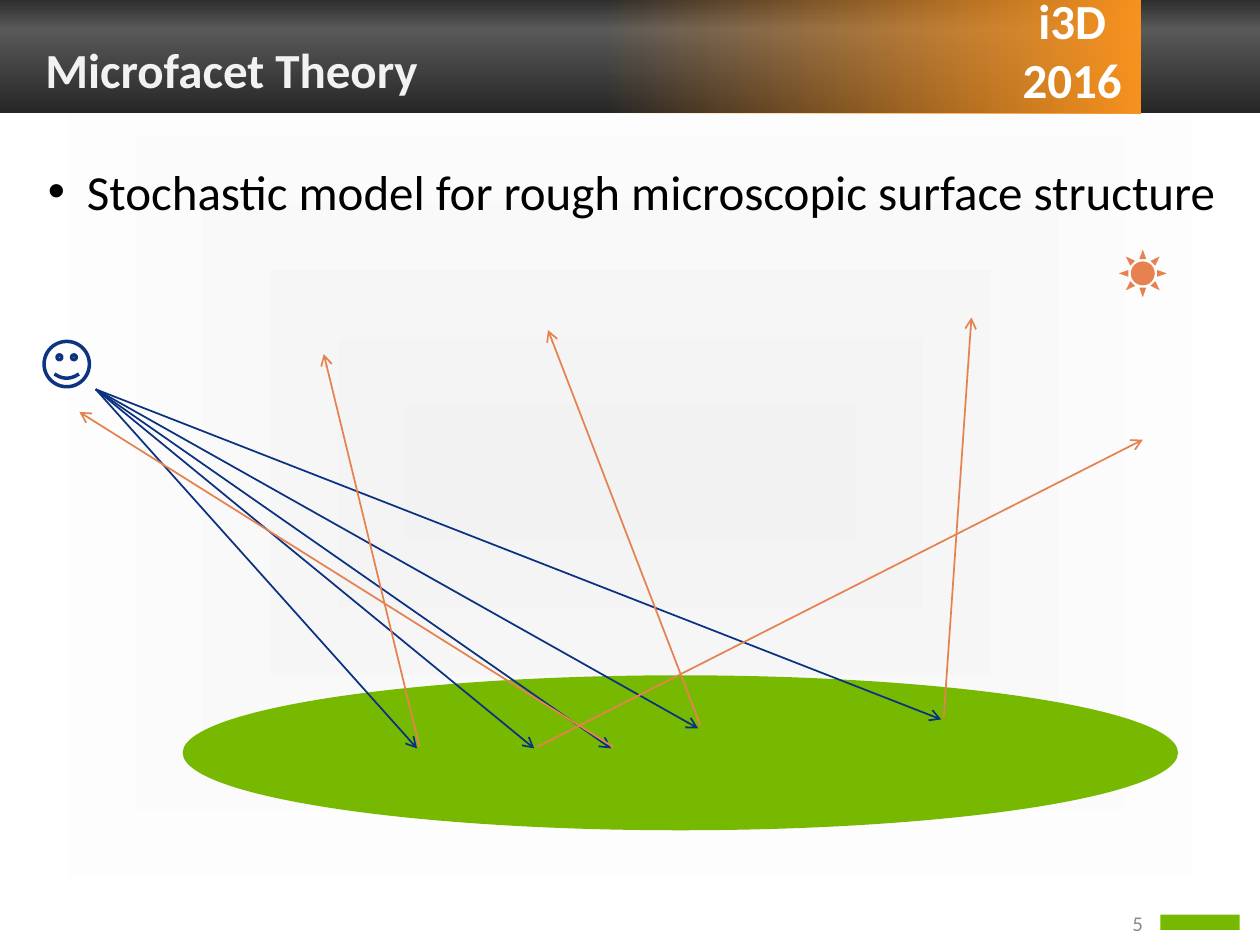
from lxml.etree import SubElement
from pptx import Presentation
from pptx.dml.color import RGBColor
from pptx.enum.shapes import MSO_CONNECTOR as CONNECTOR, MSO_SHAPE as SHAPE
from pptx.enum.text import MSO_ANCHOR as ANCHOR, MSO_AUTO_SIZE as AUTO_SIZE, PP_ALIGN as ALIGN
from pptx.oxml.ns import qn
from pptx.util import Inches, Pt

rgb = RGBColor.from_string
GREEN, NAVY, ORANGE = "76B900", "0A3281", "E68250"


def write_text(shape, text, size=28, color=None, bold=False, align=ALIGN.LEFT,
               anchor=ANCHOR.TOP, margin=0.1, left=0, hanging=0, bullet=None):
    frame = shape.text_frame
    frame.text = text
    frame.word_wrap = True
    frame.auto_size = AUTO_SIZE.NONE
    frame.vertical_anchor = anchor
    frame.margin_left = frame.margin_right = Inches(margin)
    frame.margin_top = frame.margin_bottom = Inches(0.05)
    paragraph = frame.paragraphs[0]
    paragraph.alignment = align
    paragraph.space_before = Pt(0)
    properties = paragraph._p.get_or_add_pPr()
    properties.set("marL", str(Inches(left)))
    properties.set("indent", str(Inches(-hanging)))
    if bullet:
        SubElement(properties, qn("a:buFont"), typeface="Arial")
        SubElement(properties, qn("a:buChar"), char=bullet)
    for run in paragraph.runs:
        run.font.name = "Calibri"
        run.font.size = Pt(size)
        run.font.bold = bold
        if color:
            run.font.color.rgb = rgb(color)


def apply_gradient(fill, element, stops, angle=None):
    fill.gradient()
    gradient = element.xpath(".//a:gradFill")[0]
    for child in list(gradient):
        gradient.remove(child)
    stop_list = SubElement(gradient, qn("a:gsLst"))
    for position, color, alpha in stops:
        stop = SubElement(stop_list, qn("a:gs"), pos=str(position * 1000))
        color_element = SubElement(stop, qn("a:srgbClr"), val=color)
        if alpha < 100:
            SubElement(color_element, qn("a:alpha"), val=str(alpha * 1000))
    if angle is None:
        shade = SubElement(gradient, qn("a:path"), path="shape")
        SubElement(shade, qn("a:fillToRect"), l="50000", t="50000", r="50000", b="50000")
    else:
        SubElement(gradient, qn("a:lin"), ang=str(angle * 60000), scaled="0")


presentation = Presentation()
presentation.slide_width = Inches(10)
presentation.slide_height = Inches(7.5)
slide = presentation.slides.add_slide(presentation.slide_layouts[1])
shapes = slide.shapes
title, body = slide.placeholders

apply_gradient(slide.background.fill, slide._element,
               [(0, "F2F2F2", 100), (100, "FFFFFF", 100)])

header_bands = [
    (0, 10, [(0, "262626", 100), (29, "595959", 100), (100, "262626", 100)], 90),
    (4.76, 4.29, [(0, "F9931F", 100), (100, "F9931F", 0)], 180),
]
for left, width, stops, angle in header_bands:
    band = shapes.add_shape(SHAPE.RECTANGLE, Inches(left), Inches(-0.04),
                            Inches(width), Inches(0.94))
    band.shadow.inherit = False
    band.line.fill.background()
    apply_gradient(band.fill, band._element, stops, angle)

event = shapes.add_textbox(Inches(7.95), Inches(-0.04), Inches(1.06), Inches(0.95))
write_text(event, "i3D\v2016", color="FFFFFF", bold=True, align=ALIGN.CENTER,
           anchor=ANCHOR.BOTTOM, margin=0, left=0.06)

filled_shapes = [
    (SHAPE.RECTANGLE, 9.21, 7.26, 0.63, 0.12, GREEN),
    (SHAPE.OVAL, 1.45, 5.36, 7.9, 1.23, GREEN),
    (SHAPE.SUN, 8.88, 1.98, 0.38, 0.38, ORANGE),
]
for kind, left, top, width, height, color in filled_shapes:
    shape = shapes.add_shape(kind, Inches(left), Inches(top), Inches(width), Inches(height))
    shape.shadow.inherit = False
    shape.fill.solid()
    shape.fill.fore_color.rgb = rgb(color)
    shape.line.fill.background()

for placeholder, top, height in [(title, 0.21, 0.62), (body, 1.23, 5.96)]:
    placeholder.left, placeholder.top = Inches(0.2), Inches(top)
    placeholder.width, placeholder.height = Inches(9.65), Inches(height)
    shapes._spTree.append(placeholder._element)
write_text(title, "Microfacet Theory", bold=True, anchor=ANCHOR.BOTTOM, left=0.06)
title_run = title.text_frame.paragraphs[0].runs[0]
apply_gradient(title_run.font.fill, title_run._r,
               [(0, "F2F2F2", 100), (100, "D9D9D9", 100)], 90)
write_text(body, "Stochastic model for rough microscopic surface structure",
           color="000000", left=0.39, hanging=0.31, bullet="•")

slide_number = shapes.add_textbox(Inches(8.51), Inches(7.21), Inches(0.66), Inches(0.23))
write_text(slide_number, "5", size=12, color="8C8C8C", align=ALIGN.RIGHT, anchor=ANCHOR.MIDDLE)

eye = (0.76, 3.09)
view_hits = [(3.31, 5.94), (4.24, 5.94), (4.85, 5.94), (7.47, 5.71), (5.54, 5.78)]
reflections = [
    ((3.33, 5.93), (2.57, 2.81)),
    ((4.26, 5.93), (9.07, 3.49)),
    ((4.87, 5.93), (0.63, 3.27)),
    ((5.56, 5.76), (4.35, 2.62)),
    ((7.49, 5.7), (7.71, 2.52)),
]
rays = [(eye, hit, NAVY) for hit in view_hits]
rays += [(start, end, ORANGE) for start, end in reflections]
for start, end, color in rays:
    ray = shapes.add_connector(CONNECTOR.STRAIGHT, *map(Inches, start + end))
    ray.line.color.rgb = rgb(color)
    ray.line.width = Pt(1)
    SubElement(ray.line._get_or_add_ln(), qn("a:tailEnd"), type="arrow")
    SubElement(ray._element.spPr, qn("a:effectLst"))

viewer = shapes.add_shape(SHAPE.SMILEY_FACE, Inches(0.35), Inches(2.71),
                          Inches(0.36), Inches(0.36))
viewer.shadow.inherit = False
viewer.fill.background()
viewer.line.color.rgb = rgb("0D3481")
viewer.line.width = Pt(2)

presentation.save("out.pptx")
